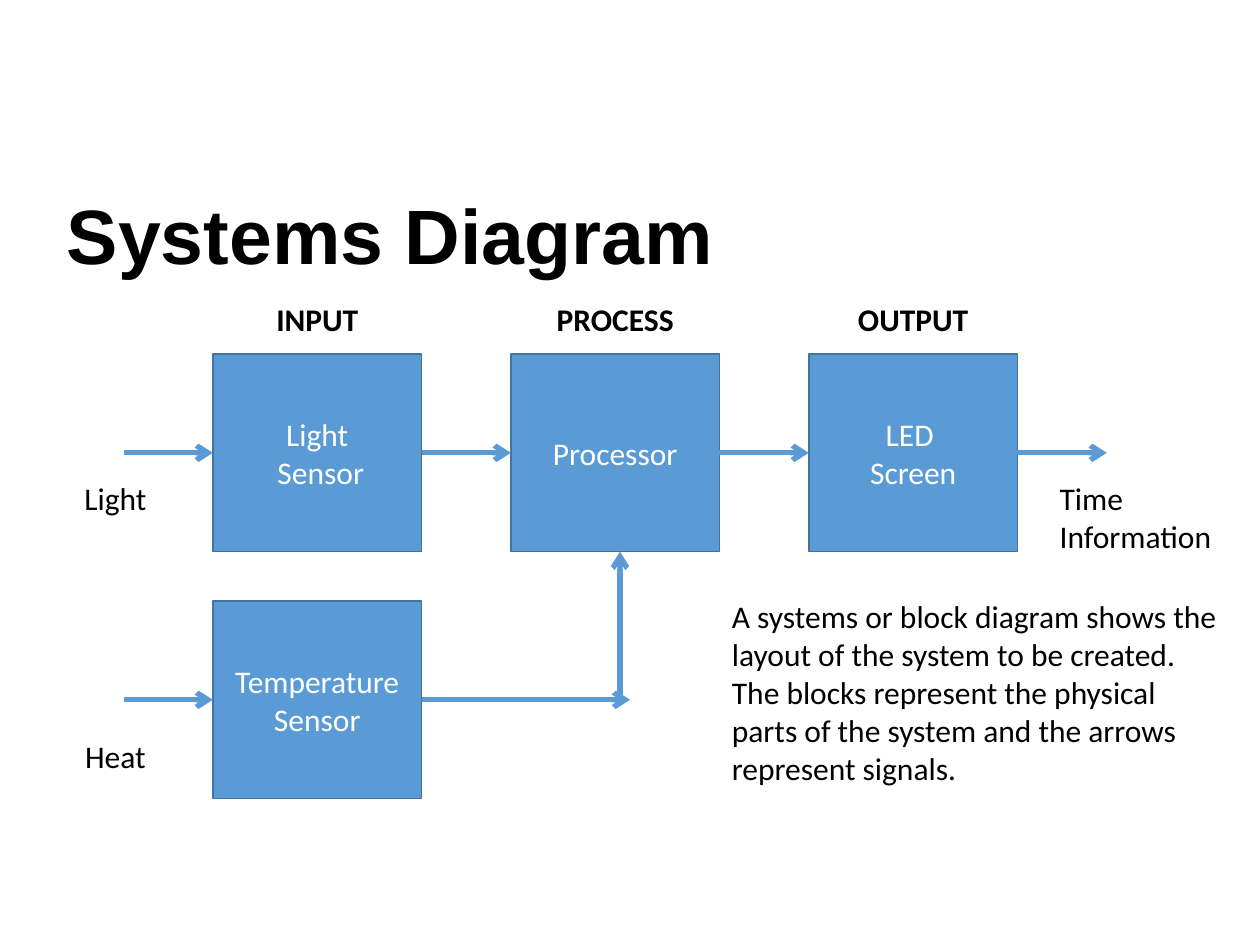
import pptx
import pptx.util
import pptx.dml.color
import pptx.enum.shapes
import pptx.enum.text
import pptx.oxml
import pptx.oxml.ns
from lxml import etree

ALIGN = pptx.enum.text.PP_ALIGN
ANCHOR = pptx.enum.text.MSO_ANCHOR
FIT = pptx.enum.text.MSO_AUTO_SIZE
BLUE, EDGE, BLACK, WHITE = "5B9BD5", "43739E", "000000", "FFFFFF"

# Grid of blocks: origin and pitch in inches; a block fills part of its cell
LEFT, TOP = 1.69, 2.81
COL, ROW = 2.365, 1.96
WIDE, HIGH = 0.7, 0.8
MID = HIGH / 2


def tint(code):
    return pptx.dml.color.RGBColor.from_string(code)


class Board:
    def __init__(self, deck):
        self.deck = deck
        self.slide = deck.slides.add_slide(deck.slide_layouts[5])
        self.font = "Calibri"
        self.size = 18

    def spot(self, col, row):
        return (pptx.util.Inches(LEFT + col * COL),
                pptx.util.Inches(TOP + row * ROW))

    def area(self, col, row, wide, high):
        return (*self.spot(col, row),
                pptx.util.Inches(wide * COL), pptx.util.Inches(high * ROW))

    def letter(self, frame, text, color, align, bold=False, font=None, size=None):
        frame.word_wrap = True
        frame.text = text
        for para in frame.paragraphs:
            para.alignment = align
            para.font.name = font or self.font
            para.font.size = pptx.util.Pt(size or self.size)
            para.font.bold = bold
            para.font.color.rgb = tint(color)

    def title(self, text, left, top, wide, high):
        """Place the title by shares of the slide."""
        box = self.slide.shapes.title
        box.left = int(left * self.deck.slide_width)
        box.top = int(top * self.deck.slide_height)
        box.width = int(wide * self.deck.slide_width)
        box.height = int(high * self.deck.slide_height)
        frame = box.text_frame
        self.letter(frame, text, BLACK, ALIGN.LEFT, True, "Arial", 44)
        frame.auto_size = FIT.NONE
        frame.vertical_anchor = ANCHOR.MIDDLE
        frame.paragraphs[0].line_spacing = 0.9

    def block(self, text, col, row):
        box = self.slide.shapes.add_shape(
            pptx.enum.shapes.MSO_SHAPE.RECTANGLE,
            *self.area(col, row, WIDE, HIGH))
        box.shadow.inherit = False
        box.fill.solid()
        box.fill.fore_color.rgb = tint(BLUE)
        box.line.color.rgb = tint(EDGE)
        box.line.width = pptx.util.Pt(1)
        box.text_frame.vertical_anchor = ANCHOR.MIDDLE
        self.letter(box.text_frame, text, WHITE, ALIGN.CENTER)

    def label(self, text, col, row, wide, high=0.2, align=ALIGN.CENTER, bold=False):
        box = self.slide.shapes.add_textbox(*self.area(col, row, wide, high))
        self.letter(box.text_frame, text, BLACK, align, bold)
        box.text_frame.auto_size = FIT.SHAPE_TO_FIT_TEXT

    def arrow(self, start, end):
        link = self.slide.shapes.add_connector(
            pptx.enum.shapes.MSO_CONNECTOR.STRAIGHT,
            *self.spot(*start), *self.spot(*end))
        link.line.color.rgb = tint(BLUE)
        link.line.width = pptx.util.Pt(3)
        qn = pptx.oxml.ns.qn
        props = link._element.spPr
        etree.SubElement(props.find(qn("a:ln")), qn("a:tailEnd"), type="arrow")
        etree.SubElement(props, qn("a:effectLst"))


def main():
    deck = pptx.Presentation()
    deck.slide_width = pptx.util.Inches(10)
    deck.slide_height = pptx.util.Inches(7.5)
    board = Board(deck)
    board.title("Systems Diagram", 0.043, 0.185, 0.9, 0.136)

    # Blocks
    for text, col, row in (("Light\n Sensor", 0, 0), ("Processor", 1, 0),
                           ("LED \nScreen", 2, 0), ("Temperature Sensor", 0, 1)):
        board.block(text, col, row)

    # Stage headings, centred over their columns
    for col, (text, wide) in enumerate((("INPUT", 0.4), ("PROCESS", 0.5),
                                        ("OUTPUT", 0.57))):
        board.label(text, col + (WIDE - wide) / 2, -0.245, wide, bold=True)

    # Signals: one before each block of the top row and one after the last
    for col in range(4):
        board.arrow((col + WIDE - 1, MID), (col, MID))
    board.arrow((WIDE - 1, 1 + MID), (0, 1 + MID))
    board.arrow((WIDE, 1 + MID), (1.4, 1 + MID))
    board.arrow((1.366, 1 + MID), (1.366, HIGH))

    # Signal names and note
    board.label("Light ", -0.6, 0.48, 0.57)
    board.label("Heat ", -0.6, 1.525, 0.57)
    board.label("Time Information", 2.8, 0.48, 0.613, 0.36, ALIGN.LEFT)
    board.label("A systems or block diagram shows the layout of the system to be "
                "created. The blocks represent the physical parts of the system "
                "and the arrows represent signals.",
                1.7, 0.96, 1.72, 0.83, ALIGN.LEFT)

    deck.save("out.pptx")


if __name__ == "__main__":
    main()
